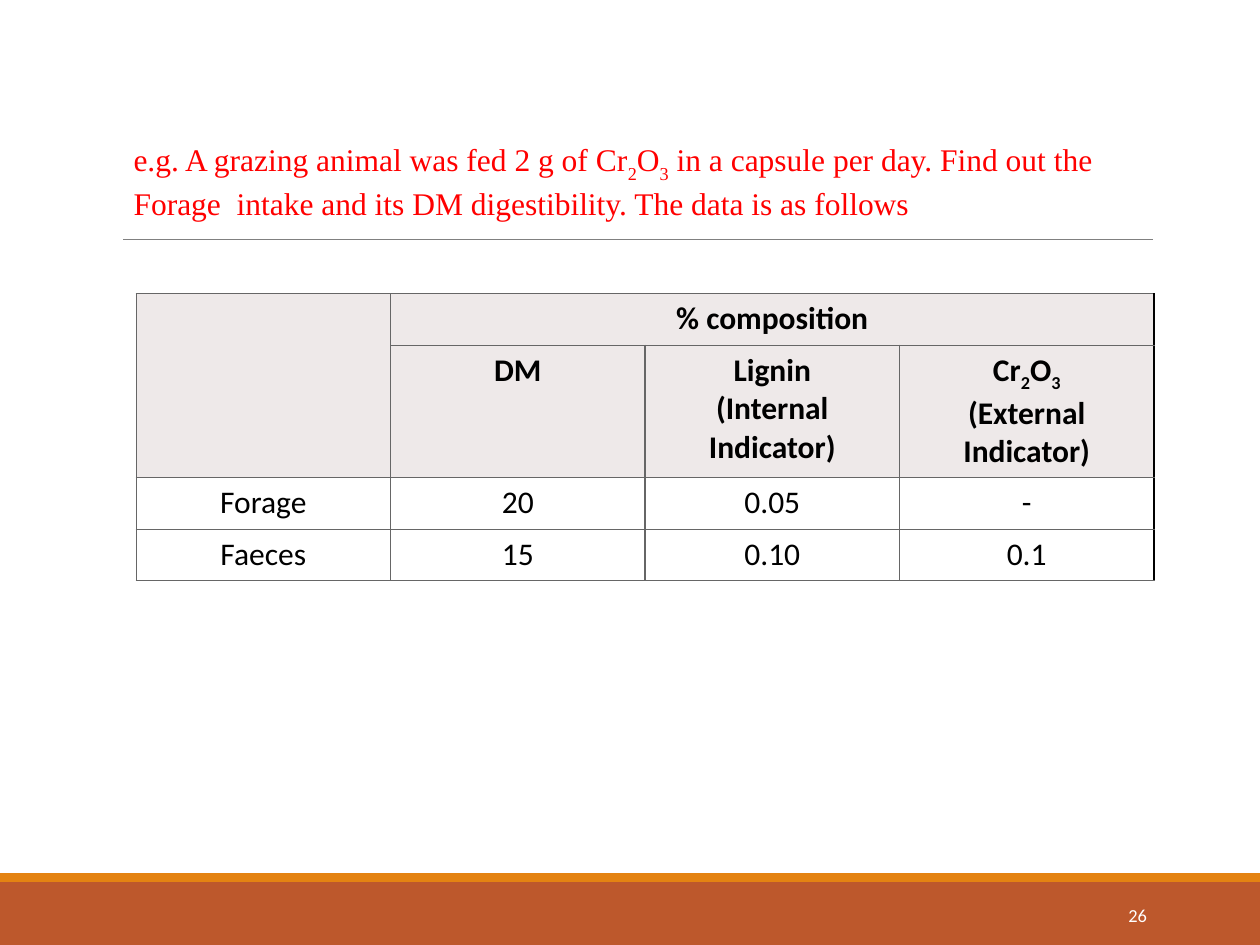
from lxml import etree
from pptx import Presentation
from pptx.dml.color import RGBColor
from pptx.enum.shapes import MSO_CONNECTOR, MSO_SHAPE
from pptx.enum.text import MSO_ANCHOR, MSO_AUTO_SIZE, PP_ALIGN
from pptx.oxml.ns import qn
from pptx.util import Inches, Pt

RECTANGLE = MSO_SHAPE.RECTANGLE
STRAIGHT = MSO_CONNECTOR.STRAIGHT
MIDDLE = MSO_ANCHOR.MIDDLE
NO_AUTOFIT = MSO_AUTO_SIZE.NONE
CENTER, RIGHT, JUSTIFY = PP_ALIGN.CENTER, PP_ALIGN.RIGHT, PP_ALIGN.JUSTIFY

RUST = RGBColor(0xBD, 0x58, 0x2C)
ORANGE = RGBColor(0xE4, 0x83, 0x12)
RED = RGBColor(0xFF, 0x00, 0x00)
GRAY = RGBColor(0x80, 0x80, 0x80)
BORDER_GRAY = RGBColor(0x66, 0x66, 0x66)
HEADER_FILL = RGBColor(0xEE, 0xE9, 0xE9)
BLACK = RGBColor(0x00, 0x00, 0x00)
WHITE = RGBColor(0xFF, 0xFF, 0xFF)


def add_text(paragraph, text, font_name, size, color, bold=False, subscript=-25):
    """Add runs; pieces between underscores are subscripts, newlines are breaks."""
    for line_number, line in enumerate(text.split("\n")):
        if line_number:
            paragraph.add_line_break()
        for position, piece in enumerate(line.split("_")):
            if not piece:
                continue
            run = paragraph.add_run()
            run.text = piece
            run.font.name = font_name
            run.font.size = Pt(size)
            run.font.bold = bold
            run.font.color.rgb = color
            if position % 2:
                run.font._element.set("baseline", str(subscript * 1000))


def add_border(cell, side, color):
    """Draw one side of a table cell."""
    line = etree.SubElement(cell._tc.get_or_add_tcPr(), qn(f"a:ln{side}"), w=str(Pt(0.75)))
    fill = etree.SubElement(line, qn("a:solidFill"))
    etree.SubElement(fill, qn("a:srgbClr"), val=str(color))


presentation = Presentation()
presentation.slide_width = Inches(10)
presentation.slide_height = Inches(7.5)
slide = presentation.slides.add_slide(presentation.slide_layouts[5])

# Footer bands
for top, height, color in [(7, 0.5, RUST), (6.93, 0.07, ORANGE)]:
    band = slide.shapes.add_shape(
        RECTANGLE, Inches(0), Inches(top), Inches(10), Inches(height))
    band.shadow.inherit = False
    band.fill.solid()
    band.fill.fore_color.rgb = color
    band.line.fill.background()

# Rule under the title
rule = slide.shapes.add_connector(
    STRAIGHT, Inches(0.98), Inches(1.9), Inches(9.15), Inches(1.9))
rule.line.color.rgb = GRAY
rule.line.width = Pt(0.5)
etree.SubElement(rule._element.spPr, qn("a:effectLst"))

# Slide number
number_box = slide.shapes.add_textbox(
    Inches(8.12), Inches(7.06), Inches(1.08), Inches(0.4))
number_box.text_frame.word_wrap = True
number_box.text_frame.vertical_anchor = MIDDLE
number_paragraph = number_box.text_frame.paragraphs[0]
number_paragraph.alignment = RIGHT
add_text(number_paragraph, "26", "Calibri", 10.5, WHITE)

# Question
title = slide.shapes.title
title.left, title.top = Inches(0.96), Inches(1.08)
title.width, title.height = Inches(7.98), Inches(0.71)
title_frame = title.text_frame
title_frame.word_wrap = True
title_frame.auto_size = NO_AUTOFIT
title_frame.vertical_anchor = MIDDLE
question_lines = [
    "e.g. A grazing animal was fed 2 g of Cr_2_O_3_ in a capsule per day. Find out the ",
    "Forage  intake and its DM digestibility. The data is as follows",
]
for index, line in enumerate(question_lines):
    paragraph = title_frame.add_paragraph() if index else title_frame.paragraphs[0]
    paragraph.alignment = JUSTIFY
    add_text(paragraph, line, "Times New Roman", 18, RED, subscript=-30)

# Composition table
rows = [
    ["", "% composition", "", ""],
    ["", "DM", "Lignin\n(Internal Indicator)", "Cr_2_O_3_\n(External Indicator)"],
    ["Forage", "20", "0.05", "-"],
    ["Faeces", "15", "0.10", "0.1"],
]
row_heights = [0.41, 1.05, 0.41, 0.41]
header_rows = 2
column_count = len(rows[0])
table = slide.shapes.add_table(
    len(rows), column_count, Inches(1.08), Inches(2.33),
    Inches(8.08), Inches(sum(row_heights))).table
for column in table.columns:
    column.width = Inches(2.02)
for row, height in zip(table.rows, row_heights):
    row.height = Inches(height)
table.cell(0, 0).merge(table.cell(1, 0))
table.cell(0, 1).merge(table.cell(0, 3))

for row_index, row in enumerate(rows):
    is_header = row_index < header_rows
    for column_index, text in enumerate(row):
        cell = table.cell(row_index, column_index)
        cell.margin_left = cell.margin_right = Inches(0.05)
        cell.margin_top = cell.margin_bottom = Inches(0.05)
        at_right_edge = column_index + cell.span_width == column_count
        for side in "LRTB":
            add_border(cell, side, BLACK if side == "R" and at_right_edge else BORDER_GRAY)
        cell.fill.solid()
        cell.fill.fore_color.rgb = HEADER_FILL if is_header else WHITE
        paragraph = cell.text_frame.paragraphs[0]
        paragraph.alignment = CENTER
        add_text(paragraph, text, "Calibri", 18, BLACK, bold=is_header)

presentation.save("out.pptx")
